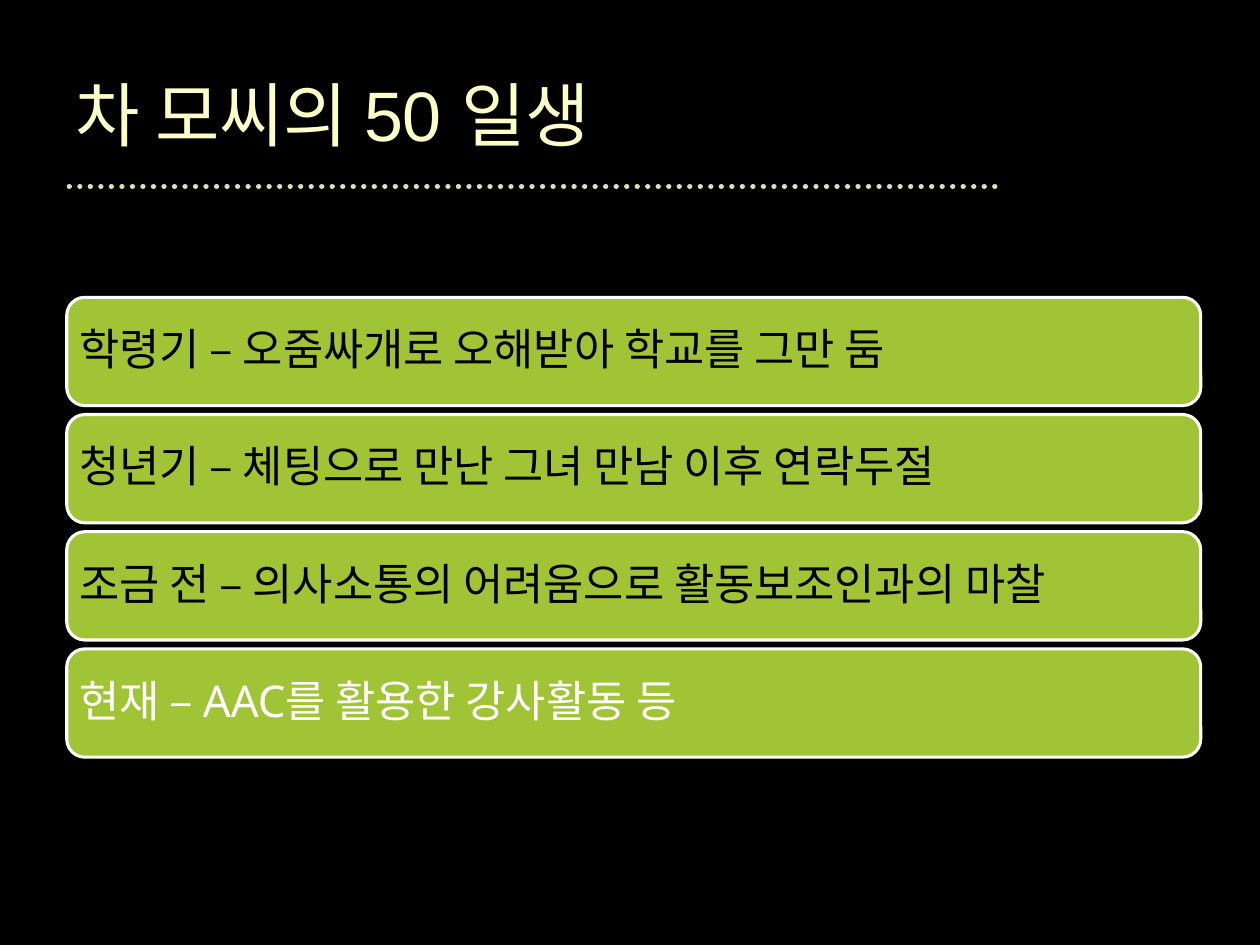
import pptx
import pptx.dml.color
import pptx.enum.dml
import pptx.enum.shapes
import pptx.enum.text
import pptx.oxml
import pptx.util
from pptx.util import Inches

COLORS = {
    "background": "000000",
    "title": "FBFEC6",
    "rule": "DDE0AF",
    "bar": "A0C435",
    "outline": "FFFFFF",
    "dark": "000000",
    "light": "FFFFFF",
}

STAGES = [
    ("학령기 – 오줌싸개로 오해받아 학교를 그만 둠", "dark"),
    ("청년기 – 체팅으로 만난 그녀 만남 이후 연락두절", "dark"),
    ("조금 전 – 의사소통의 어려움으로 활동보조인과의 마찰", "dark"),
    ("현재 – AAC를 활용한 강사활동 등", "light"),
]


def color(name):
    return pptx.dml.color.RGBColor.from_string(COLORS[name])


class LifeSlide:
    title_font = "Arial"
    body_font = "Noto Sans"

    def __init__(self, presentation):
        self.slide = presentation.slides.add_slide(presentation.slide_layouts[6])
        fill = self.slide.background.fill
        fill.solid()
        fill.fore_color.rgb = color("background")

    def set_text(self, shape, text, font_name, size, color_name):
        frame = shape.text_frame
        frame.word_wrap = True
        frame.vertical_anchor = pptx.enum.text.MSO_ANCHOR.MIDDLE
        paragraph = frame.paragraphs[0]
        paragraph.text = text
        paragraph.alignment = pptx.enum.text.PP_ALIGN.LEFT
        paragraph.font.name = font_name
        paragraph.font.size = pptx.util.Pt(size)
        paragraph.font.color.rgb = color(color_name)
        return paragraph

    def title(self, text, left, top, width, height):
        shape = self.slide.shapes.add_textbox(
            Inches(left), Inches(top), Inches(width), Inches(height))
        self.set_text(shape, text, self.title_font, 40, "title")

    def dotted_rule(self, left, right, top):
        connector = self.slide.shapes.add_connector(
            pptx.enum.shapes.MSO_CONNECTOR.STRAIGHT,
            Inches(left), Inches(top), Inches(right), Inches(top))
        connector.line.color.rgb = color("rule")
        connector.line.width = pptx.util.Pt(3)
        connector.line.dash_style = pptx.enum.dml.MSO_LINE.ROUND_DOT
        properties = connector._element.spPr
        properties.ln.set("cap", "rnd")
        properties.append(pptx.oxml.parse_xml(
            '<a:effectLst xmlns:a="http://schemas.openxmlformats.org/drawingml/2006/main"/>'))

    def bar(self, text, color_name, left, top, width, height):
        shape = self.slide.shapes.add_shape(
            pptx.enum.shapes.MSO_SHAPE.ROUNDED_RECTANGLE,
            Inches(left), Inches(top), Inches(width), Inches(height))
        shape.shadow.inherit = False
        shape.fill.solid()
        shape.fill.fore_color.rgb = color("bar")
        shape.line.color.rgb = color("outline")
        shape.line.width = pptx.util.Pt(1.75)
        shape.text_frame.margin_left = Inches(0.06)
        shape.text_frame.margin_right = Inches(0.06)
        paragraph = self.set_text(shape, text, self.body_font, 25, color_name)
        paragraph.line_spacing = 0.9


def main():
    presentation = pptx.Presentation()
    presentation.slide_width = Inches(10)
    presentation.slide_height = Inches(7.5)
    life = LifeSlide(presentation)
    life.dotted_rule(0.55, 7.97, 1.48)
    life.title("차 모씨의 50 일생", 0.5, 0.39, 7.47, 1.02)
    for index, (text, color_name) in enumerate(STAGES):
        life.bar(text, color_name, 0.53, 2.36 + index * 0.93, 9, 0.86)
    presentation.save("out.pptx")


if __name__ == "__main__":
    main()
